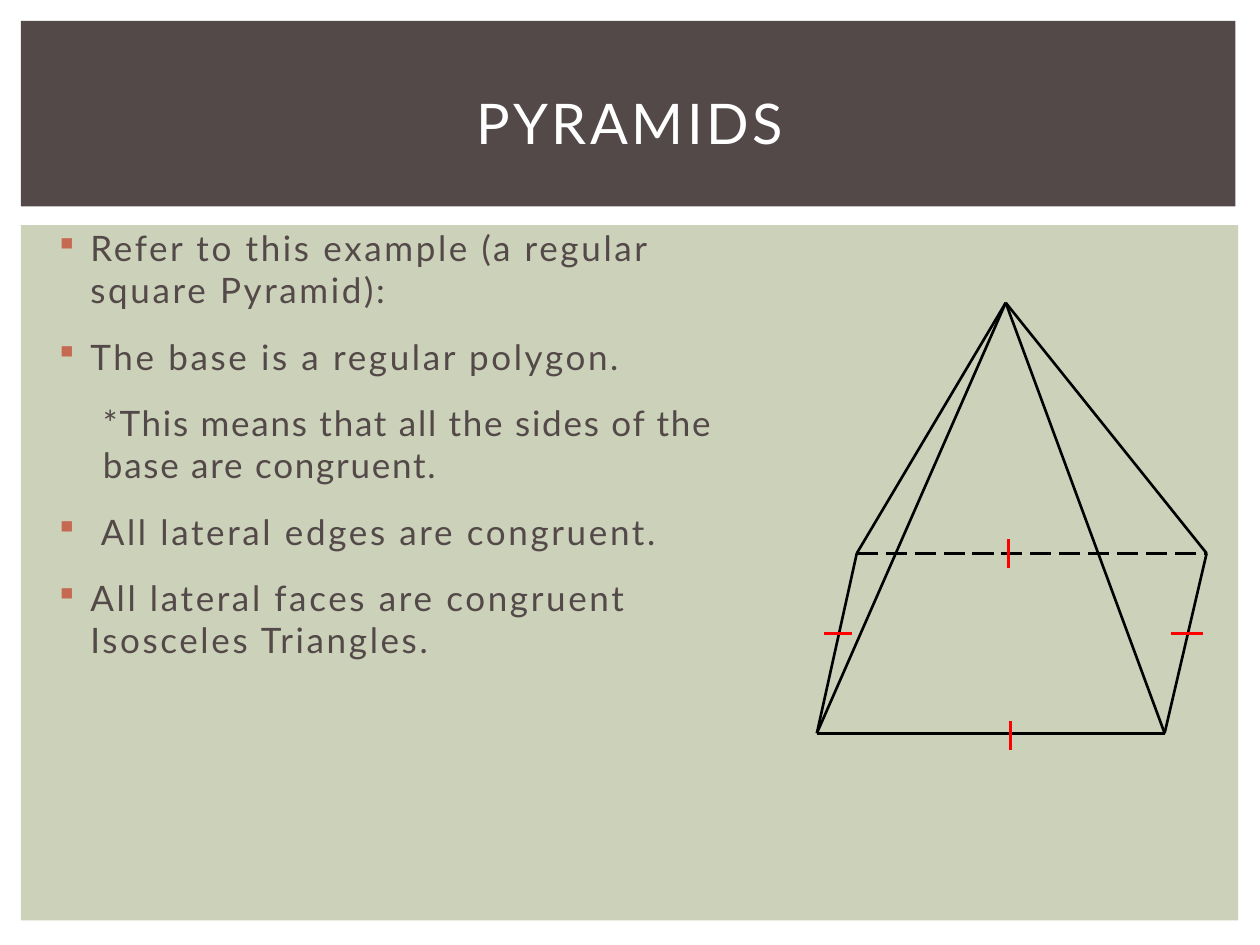
from lxml.etree import SubElement
from pptx import Presentation
from pptx.dml.color import RGBColor
from pptx.enum.dml import MSO_LINE
from pptx.enum.shapes import MSO_CONNECTOR, MSO_SHAPE
from pptx.enum.text import MSO_ANCHOR, PP_ALIGN
from pptx.oxml.ns import qn
from pptx.util import Pt

COLORS = {
    "panel": "CCD1B9",
    "band": "534949",
    "text": "534949",
    "title": "FFFFFF",
    "bullet": "C66951",
    "edge": "000000",
    "tick": "FF0000",
}


def add_line(start, end, color):
    line = page.shapes.add_connector(
        MSO_CONNECTOR.STRAIGHT, *(Pt(value) for value in (*start, *end)))
    line.line.color.rgb = RGBColor.from_string(COLORS[color])
    line.line.width = Pt(1.5)
    SubElement(line._element.spPr, qn("a:effectLst"))
    return line


def write(para, text, size, color, spacing):
    """Add text in Lato, with letter spacing in points."""
    span = para.add_run()
    span.text = text
    para.font.name = "Lato"
    para.font.size = Pt(size)
    para.font.color.rgb = RGBColor.from_string(COLORS[color])
    span._r.get_or_add_rPr().set("spc", str(int(spacing * 100)))


deck = Presentation()
deck.slide_width, deck.slide_height = Pt(720), Pt(540)
page = deck.slides.add_slide(deck.slide_layouts[6])

# Background panel and title band
for color, area in (("panel", (12, 128.7, 695.5, 397.3)),
                    ("band", (12, 12, 694, 106))):
    block = page.shapes.add_shape(MSO_SHAPE.RECTANGLE, *(Pt(value) for value in area))
    block.shadow.inherit = False
    block.fill.solid()
    block.fill.fore_color.rgb = RGBColor.from_string(COLORS[color])
    block.line.fill.background()

# Pyramid
apex = (574.7, 173)
back_left, back_right = (489.6, 316.2), (689.5, 316.2)
front_left, front_right = (466.8, 419), (665.5, 419)

add_line(back_left, back_right, "edge").line.dash_style = MSO_LINE.LONG_DASH
for start, end in ((front_left, back_left), (back_right, front_right),
                   (front_left, front_right)):
    add_line(start, end, "edge")
for corner in (back_left, back_right, front_left, front_right):
    add_line(apex, corner, "edge")

# Body text: (text, has a bullet)
statements = [
    ("Refer to this example (a regular square Pyramid):", True),
    ("The base is a regular polygon.", True),
    ("*This means that all the sides of the base are congruent.", False),
    (" All lateral edges are congruent.", True),
    ("All lateral faces are congruent Isosceles Triangles.", True),
]
body = page.shapes.add_textbox(Pt(23), Pt(126), Pt(427), Pt(384)).text_frame
body.word_wrap = True
for index, (text, bulleted) in enumerate(statements):
    para = body.add_paragraph() if index else body.paragraphs[0]
    para.space_before = Pt(4 if index else 0)
    para.space_after = Pt(10)
    para.level = 0 if bulleted else 1
    write(para, text, 20, "text", 1.5 if bulleted else 1)
    props = para._p.get_or_add_pPr()
    props.set("marL", str(Pt(21.6 if bulleted else 28.8)))
    props.set("indent", str(Pt(-18 if bulleted else 0)))
    if bulleted:
        marks = [props.makeelement(qn("a:buClr"), {}),
                 props.makeelement(qn("a:buFont"), {"typeface": "Wingdings"}),
                 props.makeelement(qn("a:buChar"), {"char": "§"})]
        SubElement(marks[0], qn("a:srgbClr"), val=COLORS["bullet"])
    else:
        marks = [props.makeelement(qn("a:buNone"), {})]
    defaults = props.find(qn("a:defRPr"))
    for mark in marks:
        defaults.addprevious(mark)

# Title
title = page.shapes.add_textbox(Pt(30), Pt(28), Pt(660), Pt(83)).text_frame
title.word_wrap = True
title.vertical_anchor = MSO_ANCHOR.MIDDLE
title.paragraphs[0].alignment = PP_ALIGN.CENTER
write(title.paragraphs[0], "PYRAMIDS", 32, "title", 2)

# Congruence ticks on the four base edges
for start, end in (((471, 362), (487, 362)), ((577.3, 412), (577.3, 428.4)),
                   ((576.2, 324.6), (576.2, 308.2)), ((687.5, 362), (669.4, 362))):
    add_line(start, end, "tick")

deck.save("out.pptx")
